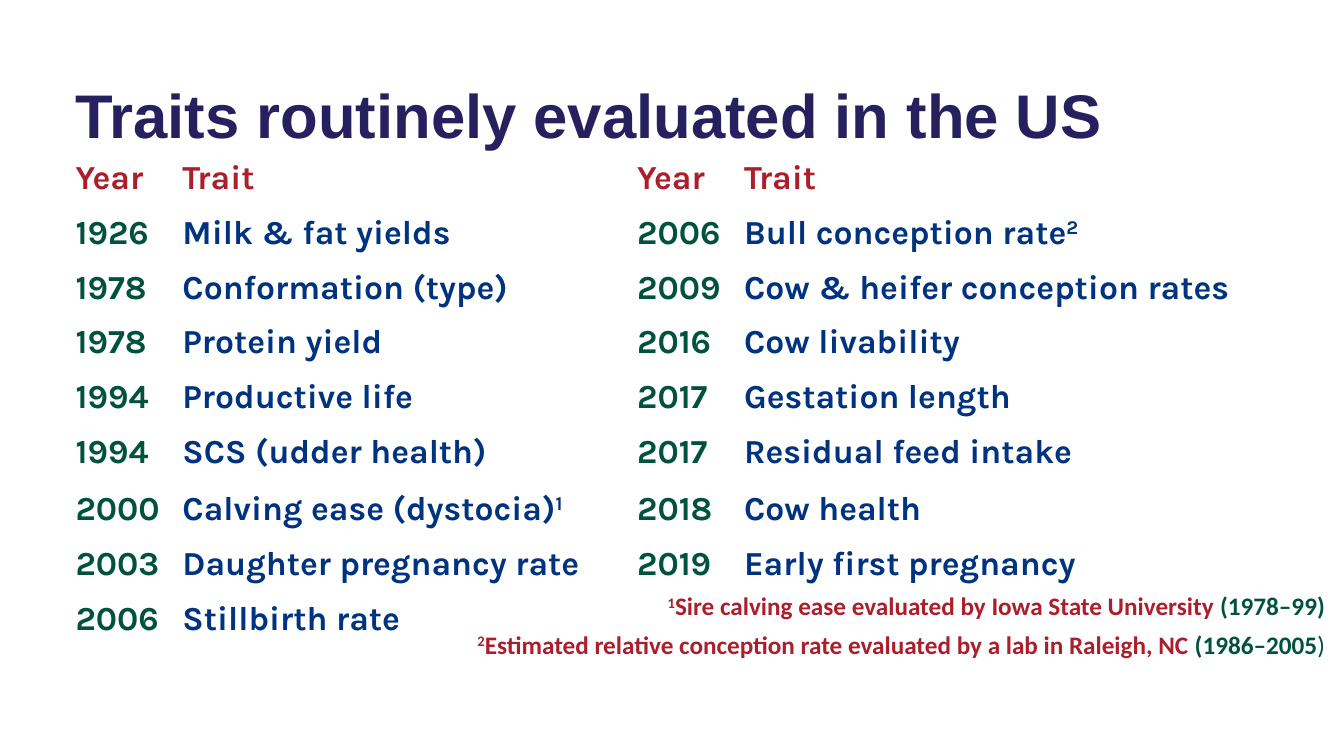
from pptx import Presentation
from pptx import util as u
from pptx.dml.color import RGBColor
from pptx.enum import shapes, text

WHITE, NAVY, RED, GREEN, BLUE = "FFFFFF", "26205E", "AB1E2C", "00523C", "00337F"

# A caret marks the superscript that ends a trait
EARLY_TRAITS = [
    ("Year", "Trait"),
    ("1926", "Milk & fat yields"),
    ("1978", "Conformation (type)"),
    ("1978", "Protein yield"),
    ("1994", "Productive life"),
    ("1994", "SCS (udder health)"),
    ("2000", "Calving ease (dystocia)^1"),
    ("2003", "Daughter pregnancy rate"),
    ("2006", "Stillbirth rate"),
]
LATE_TRAITS = [
    ("Year", "Trait"),
    ("2006", "Bull conception rate^2"),
    ("2009", "Cow & heifer conception rates"),
    ("2016", "Cow livability"),
    ("2017", "Gestation length"),
    ("2017", "Residual feed intake"),
    ("2018", "Cow health"),
    ("2019", "Early first pregnancy"),
    ("", ""),
]
COLUMN_WIDTHS = (1.06, 4.51, 1.06, 5.37)
TALL_ROW, TALL_HEIGHT = 5, 0.57

FOOTNOTES = [
    ("1", "Sire calving ease evaluated by Iowa State University ", "(1978–99", True),
    ("2", "Estimated relative conception rate evaluated by a lab in Raleigh, NC ",
     "(1986–2005", False),
]


def rgb(value):
    return RGBColor.from_string(value)


def add_run(paragraph, words, font, size, color, bold=True, raised=False):
    run = paragraph.add_run()
    run.text = words
    run.font.name, run.font.size, run.font.bold = font, u.Pt(size), bold
    run.font.color.rgb = rgb(color)
    if raised:
        run.font._element.set("baseline", "30000")


def add_title(slide, left, top, width, height):
    title = slide.shapes.add_textbox(*map(u.Inches, (left, top, width, height)))
    frame = title.text_frame
    frame.word_wrap = True
    frame.vertical_anchor = text.MSO_ANCHOR.MIDDLE
    heading = frame.paragraphs[0]
    heading.line_spacing = 0.9
    add_run(heading, "Traits routinely evaluated in the US", "Arial", 44, NAVY)


def fill_cell(cell, words, color):
    cell.fill.solid()
    cell.fill.fore_color.rgb = rgb(WHITE)
    if not words:
        return
    entry = cell.text_frame.paragraphs[0]
    entry.line_spacing = u.Pt(24)
    name, _, mark = words.partition("^")
    add_run(entry, name, "Karla", 24, color)
    if mark:
        add_run(entry, mark, "Karla", 24, color, raised=True)


def add_trait_table(slide, left, top, width, height):
    rows = [early + late for early, late in zip(EARLY_TRAITS, LATE_TRAITS)]
    box = map(u.Inches, (left, top, width, height))
    traits = slide.shapes.add_table(len(rows), len(COLUMN_WIDTHS), *box).table
    for column, column_width in zip(traits.columns, COLUMN_WIDTHS):
        column.width = u.Inches(column_width)
    row_height = (height - TALL_HEIGHT) / (len(rows) - 1)
    for r, row in enumerate(rows):
        traits.rows[r].height = u.Inches(TALL_HEIGHT if r == TALL_ROW else row_height)
        for c, words in enumerate(row):
            body_color = BLUE if c % 2 else GREEN
            fill_cell(traits.cell(r, c), words, body_color if r else RED)


def add_footnotes(slide, left, top, width, height):
    panel = slide.shapes.add_shape(
        shapes.MSO_SHAPE.RECTANGLE, *map(u.Inches, (left, top, width, height)))
    panel.shadow.inherit = False
    panel.fill.solid()
    panel.fill.fore_color.rgb = rgb(WHITE)
    panel.line.fill.background()
    frame = panel.text_frame
    frame.word_wrap = True
    frame.vertical_anchor = text.MSO_ANCHOR.TOP
    for i, (mark, note, years, bold_close) in enumerate(FOOTNOTES):
        line = frame.add_paragraph() if i else frame.paragraphs[0]
        line.alignment = text.PP_ALIGN.RIGHT
        line.space_after = u.Pt(6)
        add_run(line, mark, "Calibri", 18, RED, raised=True)
        add_run(line, note, "Calibri", 18, RED)
        add_run(line, years, "Calibri", 18, GREEN)
        add_run(line, ")", "Calibri", 18, GREEN, bold=bold_close)


def main():
    deck = Presentation()
    deck.slide_width, deck.slide_height = u.Inches(13.33), u.Inches(7.5)
    slide = deck.slides.add_slide(deck.slide_layouts[6])
    add_title(slide, 0.65, 0.32, 12, 1.71)
    add_trait_table(slide, 0.65, 1.58, 12, 4.92)
    add_footnotes(slide, 4.22, 5.81, 9.02, 0.79)
    deck.save("out.pptx")


if __name__ == "__main__":
    main()
